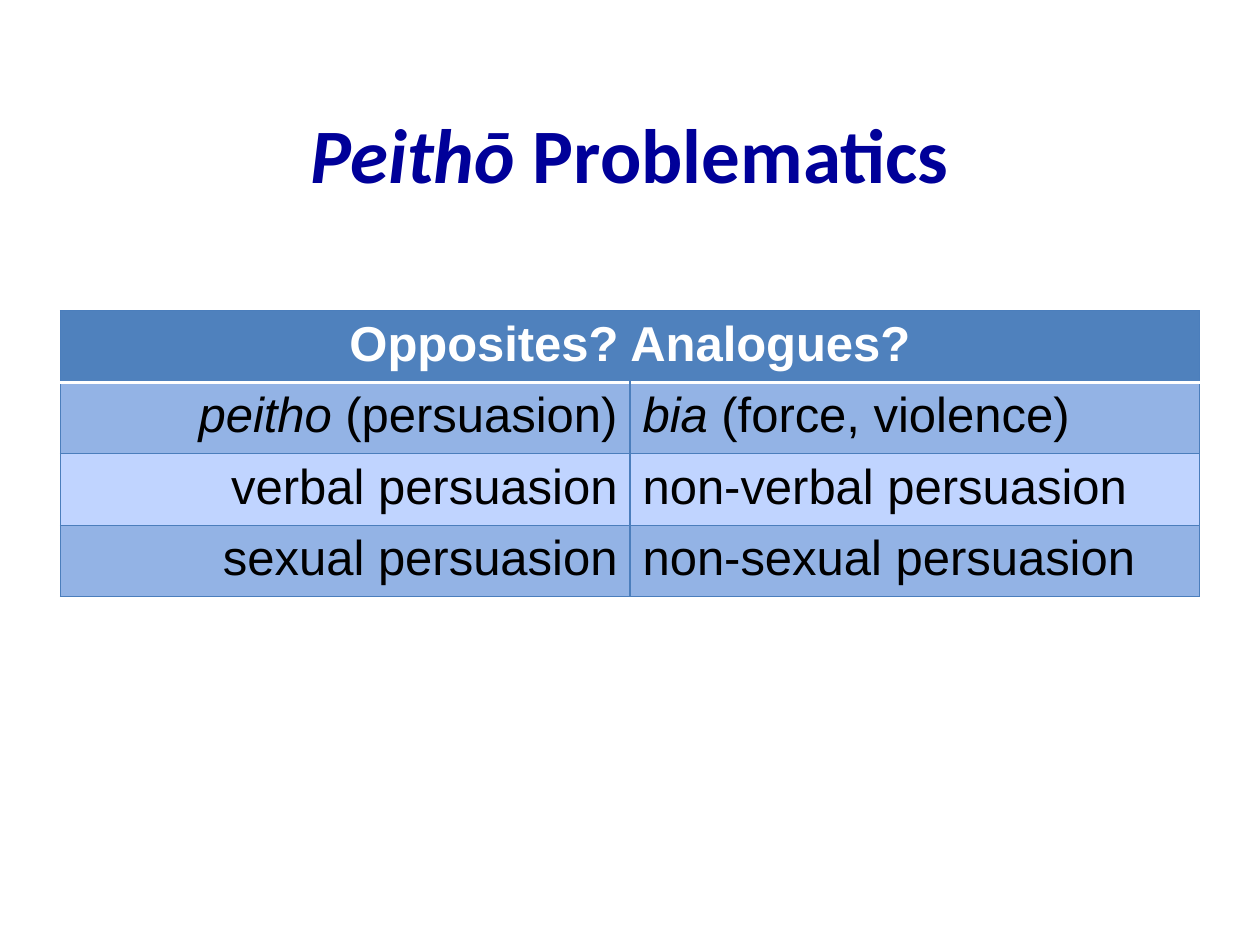
import pptx
import pptx.dml.color
import pptx.enum.text
import pptx.oxml.ns
import pptx.util
from lxml import etree

Pt = pptx.util.Pt
RGBColor = pptx.dml.color.RGBColor
ALIGN = pptx.enum.text.PP_ALIGN
ANCHOR = pptx.enum.text.MSO_ANCHOR
qn = pptx.oxml.ns.qn

NAVY = RGBColor(0x00, 0x00, 0x99)
WHITE = RGBColor(0xFF, 0xFF, 0xFF)
BLACK = RGBColor(0x00, 0x00, 0x00)
HEADER = RGBColor(0x4F, 0x81, 0xBD)
BAND_DARK = RGBColor(0x93, 0xB3, 0xE5)
BAND_LIGHT = RGBColor(0xC0, 0xD4, 0xFF)
BORDER = RGBColor(0x4B, 0x7E, 0xBC)

# Each cell is an italic lead followed by upright text
HEADING = "Opposites? Analogues?"
ROWS = [
    [("peitho", " (persuasion)"), ("bia", " (force, violence)")],
    [("", "verbal persuasion"), ("", "non-verbal persuasion")],
    [("", "sexual persuasion"), ("", "non-sexual persuasion")],
]


def write(p, lead, rest, font, size, color, bold, align):
    p.alignment = align
    p.font.name, p.font.size, p.font.bold = font, Pt(size), bold
    p.font.color.rgb = color
    for text, italic in ((lead, True), (rest, False)):
        if text:
            r = p.add_run()
            r.text = text
            r.font.italic = italic


def set_borders(cell, **special):
    """Draw all four edges; special maps an edge to (color, width)."""
    tcPr = cell._tc.get_or_add_tcPr()
    for i, edge in enumerate(("lnL", "lnR", "lnT", "lnB")):
        color, width = special.get(edge, (BORDER, 0.75))
        ln = etree.Element(qn("a:" + edge), w=str(Pt(width)))
        fill = etree.SubElement(ln, qn("a:solidFill"))
        etree.SubElement(fill, qn("a:srgbClr"), val=str(color))
        tcPr.insert(i, ln)


def add_title(slide, left, top, width, height):
    tf = slide.shapes.add_textbox(Pt(left), Pt(top), Pt(width), Pt(height)).text_frame
    tf.word_wrap = True
    tf.vertical_anchor = ANCHOR.MIDDLE
    write(tf.paragraphs[0], "Peithō", " Problematics", "Calibri", 44, NAVY, True, ALIGN.CENTER)


def add_comparison(slide, left, top, width, height):
    table = slide.shapes.add_table(len(ROWS) + 1, 2, Pt(left), Pt(top), Pt(width), Pt(height)).table
    table.horz_banding = False
    white_rule = (WHITE, 2)

    # Header across both columns
    head = table.cell(0, 0)
    head.merge(table.cell(0, 1))
    write(head.text_frame.paragraphs[0], "", HEADING, "Arial", 28, WHITE, True, ALIGN.CENTER)
    for cell in table.rows[0].cells:
        cell.fill.solid()
        cell.fill.fore_color.rgb = HEADER
        set_borders(cell, lnB=white_rule)

    # Banded pairs that meet at the centre line
    for i, pair in enumerate(ROWS):
        for j, (lead, rest) in enumerate(pair):
            cell = table.cell(i + 1, j)
            align = (ALIGN.RIGHT, ALIGN.LEFT)[j]
            write(cell.text_frame.paragraphs[0], lead, rest, "Arial", 28, BLACK, False, align)
            cell.fill.solid()
            cell.fill.fore_color.rgb = BAND_LIGHT if i % 2 else BAND_DARK
            set_borders(cell, **({"lnT": white_rule} if i == 0 else {}))


def main():
    prs = pptx.Presentation()
    prs.slide_width, prs.slide_height = Pt(720), Pt(540)
    slide = prs.slides.add_slide(prs.slide_layouts[6])
    add_title(slide, 36, 42, 648, 90)
    add_comparison(slide, 34.5, 177.5, 651, 154)
    prs.save("out.pptx")


if __name__ == "__main__":
    main()
